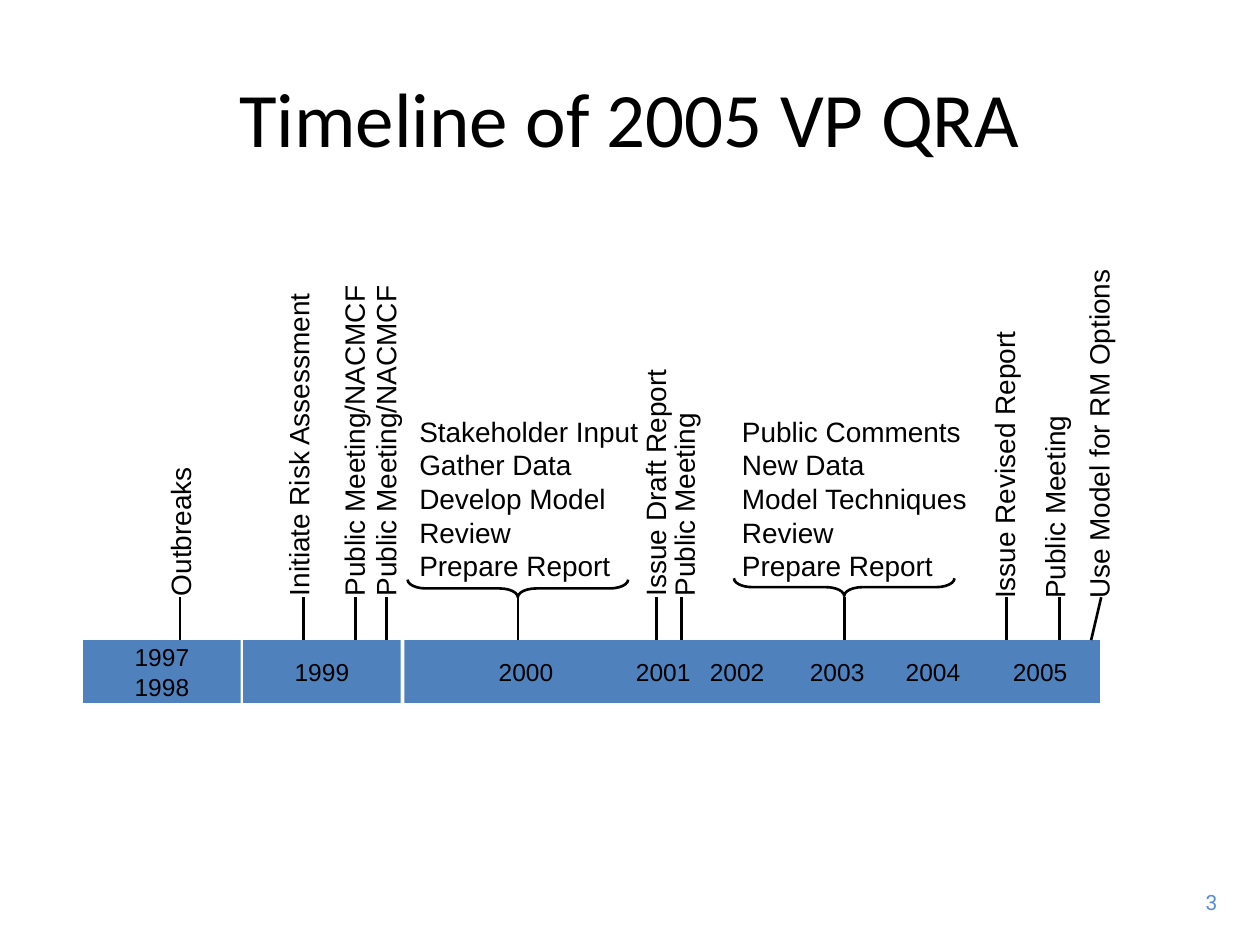
from lxml import etree
from pptx import Presentation
from pptx import util as u
from pptx.dml.color import RGBColor
from pptx.enum import shapes, text
from pptx.oxml import ns

BLACK, BAR_BLUE, NUMBER_BLUE = "000000", "4F81BD", "558ED5"
LEFT, CENTER, RIGHT = text.PP_ALIGN.LEFT, text.PP_ALIGN.CENTER, text.PP_ALIGN.RIGHT

# Positions across the timeline are measured from its left edge.
YEARS = [  # lines, left, width, alignment
    (["1997", "1998"], 0, 1.25, CENTER),
    (["1999"], 1.27, 1.25, CENTER),
    (["2000"], 2.55, 1.28, RIGHT),
    (["2001"], 3.75, 1.17, RIGHT),
    (["2003"], 5.5, 0.97, CENTER),
    (["2004"], 6.33, 0.83, CENTER),
    (["2005"], 7.12, 0.95, CENTER),
    (["2002"], 4.88, 0.62, CENTER),
]
EVENTS = [  # label, label centre, label length, label end, tick top, tick bottom
    ("Outbreaks", 0.77, 1.25, -0.25, 0.77, 0.77),
    ("Initiate Risk Assessment", 1.71, 2.81, -0.25, 1.75, 1.75),
    ("Public Meeting/NACMCF", 2.15, 2.91, -0.25, 2.16, 2.16),
    ("Public Meeting/NACMCF", 2.4, 3.91, -0.25, 2.41, 2.41),
    ("Issue Draft Report", 4.54, 2.17, -0.25, 4.55, 4.55),
    ("Public Meeting", 4.77, 1.83, -0.25, 4.75, 4.75),
    ("Issue Revised Report", 7.31, 2.48, -0.23, 7.33, 7.33),
    ("Public Meeting", 7.71, 1.83, -0.23, 7.75, 7.75),
    ("Use Model for RM Options", 8.06, 2.94, -0.23, 8.08, 8.0),
]
PHASES = [  # lines, text left, text width, brace centre, brace middle
    (["Stakeholder Input", "Gather Data", "Develop Model", "Review", "Prepare Report"],
     2.57, 2.1, 3.45, -0.41),
    (["Public Comments", "New Data", "Model Techniques", "Review", "Prepare Report"],
     5.13, 2.25, 6.04, -0.42),
]


def color(hex_string):
    return RGBColor.from_string(hex_string)


def write_lines(shape, lines, size, font="Arial", fill=BLACK, align=LEFT,
                anchor=text.MSO_ANCHOR.TOP, wrap=True):
    frame = shape.text_frame
    frame.word_wrap = wrap
    frame.vertical_anchor = anchor
    for index, line in enumerate(lines):
        paragraph = frame.paragraphs[0] if index == 0 else frame.add_paragraph()
        paragraph.alignment = align
        run = paragraph.add_run()
        run.text = line
        run.font.size = u.Pt(size)
        run.font.name = font
        run.font.color.rgb = color(fill)


def add_box(slide, left, top, width, height):
    return slide.shapes.add_textbox(*map(u.Inches, (left, top, width, height)))


def add_preset(slide, preset, left, top, width, height):
    shape = slide.shapes.add_shape(preset, *map(u.Inches, (left, top, width, height)))
    shape.shadow.inherit = False
    return shape


def add_tick(slide, x_top, x_bottom, bar_top):
    ends = map(u.Inches, (x_top, bar_top - 0.34, x_bottom, bar_top))
    tick = slide.shapes.add_connector(shapes.MSO_CONNECTOR.STRAIGHT, *ends)
    tick.line.color.rgb = color(BLACK)
    tick.line.width = u.Pt(1.5)
    etree.SubElement(tick._element.spPr, ns.qn("a:effectLst"))


def add_year(slide, lines, left, top, width, align):
    bar = add_preset(slide, shapes.MSO_SHAPE.RECTANGLE, left, top, width, 0.5)
    bar.fill.solid()
    bar.fill.fore_color.rgb = color(BAR_BLUE)
    bar.line.fill.background()
    write_lines(bar, lines, 14, align=align, anchor=text.MSO_ANCHOR.MIDDLE, wrap=False)


def add_upward_label(slide, label, center, bottom, length):
    """Places a label that reads upwards from the given bottom end."""
    height = 0.37
    box = add_box(slide, center - length / 2, bottom - length / 2 - height / 2, length, height)
    box.rotation = 270
    write_lines(box, [label], 16)


def add_brace(slide, center, middle):
    """Places a left brace turned so that its point faces down."""
    depth, span = 0.14, 1.75
    brace = add_preset(slide, shapes.MSO_SHAPE.LEFT_BRACE,
                       center - depth / 2, middle - span / 2, depth, span)
    brace.rotation = 270
    brace.adjustments[0] = 1.037
    brace.adjustments[1] = 0.5
    brace.fill.background()
    brace.line.color.rgb = color(BLACK)
    brace.line.width = u.Pt(1.5)


def add_timeline(slide, left, top):
    """Draws the year bars with their top left corner at the given point, and all above them."""
    for lines, x, width, align in YEARS:
        add_year(slide, lines, left + x, top, width, align)
    for label, center, length, end, x_top, x_bottom in EVENTS:
        add_upward_label(slide, label, left + center, top + end, length)
        add_tick(slide, left + x_top, left + x_bottom, top)
    for lines, x, width, center, middle in PHASES:
        write_lines(add_box(slide, left + x, top - 1.84, width, 1.44), lines, 16)
        add_brace(slide, left + center, top + middle)
        add_tick(slide, left + center, left + center, top)


def add_title(slide, left, top, width, height):
    write_lines(add_box(slide, left, top, width, height), ["Timeline of 2005 VP QRA"], 44,
                font="Calibri", align=CENTER, anchor=text.MSO_ANCHOR.MIDDLE)


def add_slide_number(slide, left, top, width, height):
    write_lines(add_box(slide, left, top, width, height), ["3"], 12,
                font="Roboto", fill=NUMBER_BLUE, align=RIGHT, wrap=False)


def main():
    presentation = Presentation()
    presentation.slide_width = u.Inches(10)
    presentation.slide_height = u.Inches(7.5)
    slide = presentation.slides.add_slide(presentation.slide_layouts[6])
    add_slide_number(slide, 9.35, 7.01, 0.41, 0.3)
    add_timeline(slide, 0.66, 5.08)
    add_title(slide, 0.5, 0.3, 9, 1.25)
    presentation.save("out.pptx")


if __name__ == "__main__":
    main()
